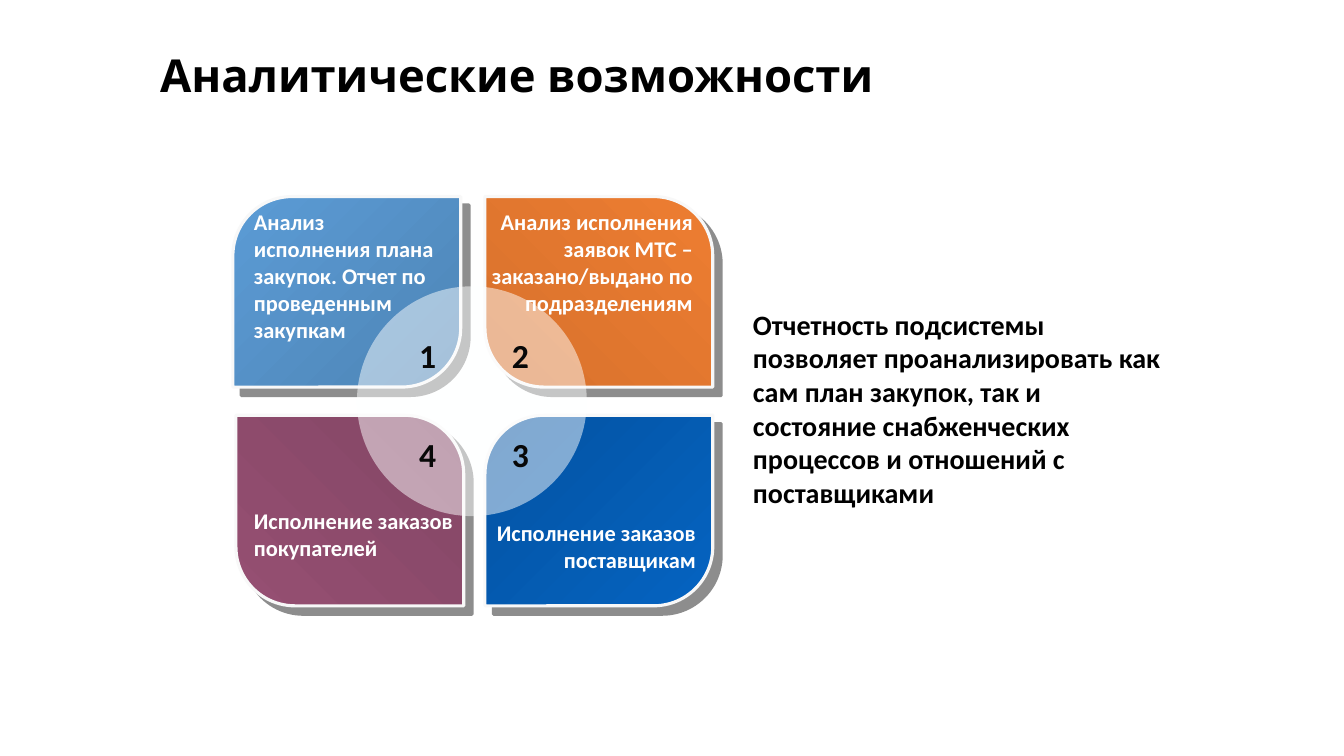
from dataclasses import dataclass

from lxml import etree
from pptx import Presentation
from pptx import util as u
from pptx.dml.color import RGBColor
from pptx.enum import shapes, text
from pptx.oxml import ns


@dataclass
class Theme:
    heading_font: str = "Karla"
    body_font: str = "Calibri"
    title_size: float = 32.4
    tile_size: float = 16
    number_size: float = 24
    summary_size: float = 20
    black: str = "000000"
    white: str = "FFFFFF"
    number: str = "080808"
    tile_line: str = "F8F8F8"
    shadow: str = "1C1C1C"
    circle: str = "FEFFFF"
    blue: tuple = ("4E85B6", "5B9BD5")
    orange: tuple = ("D7712C", "ED7D31")
    purple: tuple = ("954F72", "844665")
    navy: tuple = ("0563C1", "0453A1")


theme = Theme()
LEFT, RIGHT = text.PP_ALIGN.LEFT, text.PP_ALIGN.RIGHT

presentation = Presentation()
presentation.slide_width = u.Inches(13.33)
presentation.slide_height = u.Inches(7.5)
slide = presentation.slides.add_slide(presentation.slide_layouts[6])


def add_text(words, box, size, color, font=theme.body_font, align=LEFT, wrap=True):
    shape = slide.shapes.add_textbox(*map(u.Inches, box))
    shape.text_frame.word_wrap = wrap
    paragraph = shape.text_frame.paragraphs[0]
    paragraph.text = words
    paragraph.alignment = align
    paragraph.font.name = font
    paragraph.font.size = u.Pt(size)
    paragraph.font.bold = True
    paragraph.font.color.rgb = RGBColor.from_string(color)
    return shape


# Title
title = add_text("Аналитические возможности", (1.49, 0.46, 10.73, 0.63),
                 theme.title_size, theme.black, theme.heading_font)
title.text_frame.vertical_anchor = text.MSO_ANCHOR.MIDDLE
title.text_frame.paragraphs[0].line_spacing = 0.9

# Four tiles: left, top, gradient, gradient angle, rounded diagonal
ROUND = 0.31
tiles = [
    (2.31, 1.95, theme.blue, 135, (ROUND, 0)),
    (4.81, 1.95, theme.orange, 45, (0, ROUND)),
    (2.34, 4.12, theme.purple, 45, (0, ROUND)),
    (4.81, 4.12, theme.navy, 135, (ROUND, 0)),
]
for left, top, colors, angle, corners in tiles:
    tile = slide.shapes.add_shape(
        shapes.MSO_SHAPE.ROUND_2_DIAG_RECTANGLE,
        u.Inches(left), u.Inches(top), u.Inches(2.26), u.Inches(1.89))
    tile.adjustments[0], tile.adjustments[1] = corners
    tile.fill.gradient()
    tile.fill.gradient_angle = angle
    for stop, position, color in zip(tile.fill.gradient_stops, (0, 1), colors):
        stop.position = position
        stop.color.rgb = RGBColor.from_string(color)
    tile.line.color.rgb = RGBColor.from_string(theme.tile_line)
    tile.line.width = u.Pt(2.25)

    # Hard diagonal shadow
    tile.shadow.inherit = False
    effects = tile.element.spPr.find(ns.qn("a:effectLst"))
    shadow = etree.SubElement(
        effects, ns.qn("a:outerShdw"), blurRad="0", dist=str(u.Pt(8.5)),
        dir="2700000", algn="ctr", rotWithShape="0")
    shade = etree.SubElement(shadow, ns.qn("a:srgbClr"), val=theme.shadow)
    etree.SubElement(shade, ns.qn("a:alpha"), val="50000")

# Translucent centre circle
circle = slide.shapes.add_shape(
    shapes.MSO_SHAPE.OVAL,
    u.Inches(3.54), u.Inches(2.84), u.Inches(2.28), u.Inches(2.28))
circle.shadow.inherit = False
circle.fill.solid()
circle.fill.fore_color.rgb = RGBColor.from_string(theme.circle)
circle_color = circle.element.spPr.find(ns.qn("a:solidFill"))[0]
etree.SubElement(circle_color, ns.qn("a:alpha"), val="50000")
circle.line.fill.background()

# Tile labels
labels = [
    ("Анализ исполнения плана закупок. Отчет по проведенным закупкам",
     (2.42, 2.02, 2.03, 1.45), LEFT),
    ("Анализ исполнения заявок МТС – заказано/выдано по подразделениям",
     (4.63, 2.02, 2.34, 1.18), RIGHT),
    ("Исполнение заказов покупателей", (2.42, 4.98, 2.19, 0.64), LEFT),
    ("Исполнение заказов поставщикам", (4.81, 5.1, 2.19, 0.64), RIGHT),
]
for words, box, align in labels:
    add_text(words, box, theme.tile_size, theme.white, align=align)

# Tile numbers, clockwise
for number, left, top in (("1", 4.06, 3.27), ("2", 4.98, 3.27),
                          ("3", 4.98, 4.26), ("4", 4.06, 4.26)):
    add_text(number, (left, top, 0.37, 0.5), theme.number_size, theme.number, wrap=False)

# Summary
add_text("Отчетность подсистемы позволяет проанализировать как сам план закупок, "
         "так и состояние снабженческих процессов и отношений с поставщиками",
         (7.37, 3, 4.3, 2.12), theme.summary_size, theme.black)

presentation.save("out.pptx")
